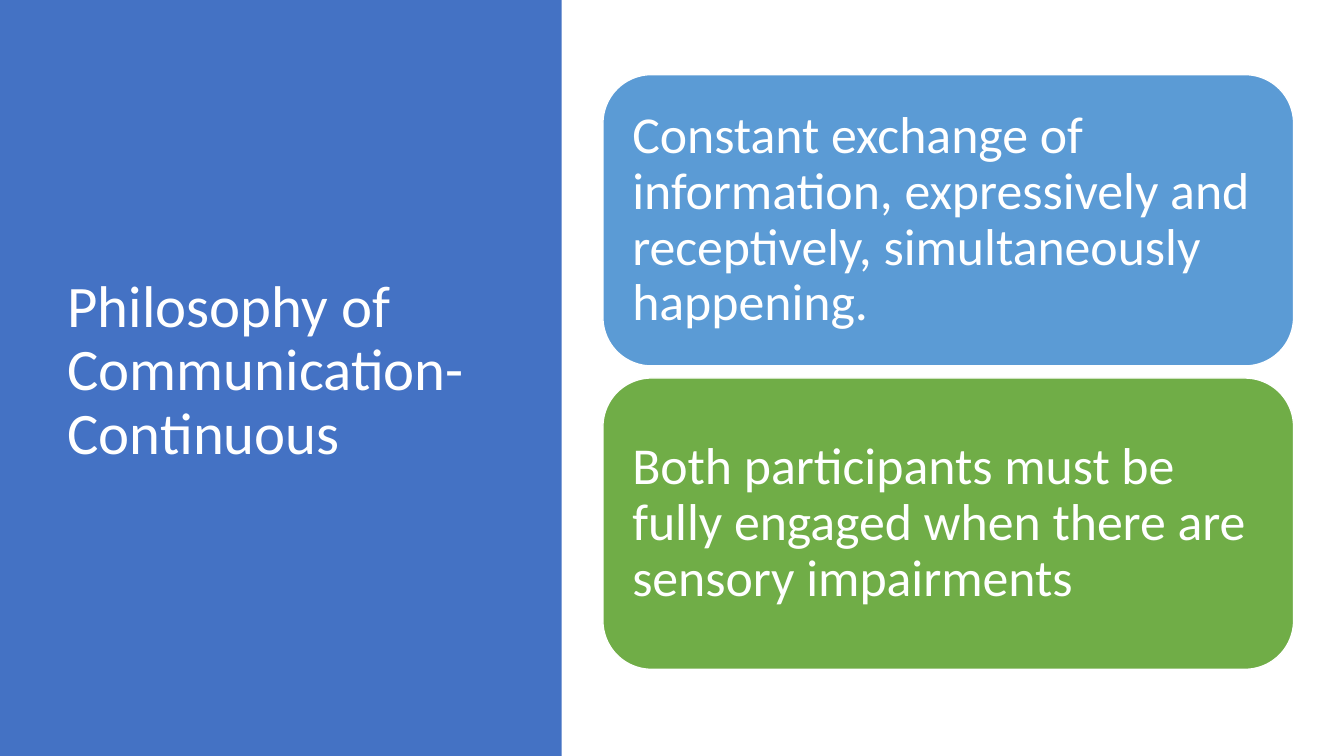
"""Build the slide on continuous communication."""
from pptx import Presentation
from pptx.dml.color import RGBColor
from pptx.enum import shapes, text
from pptx.util import Inches, Pt

TITLE = "Philosophy of Communication-Continuous"
CARDS = [
    ("Constant exchange of information, expressively and receptively, "
     "simultaneously happening.", "5B9BD5"),
    ("Both participants must be fully engaged when there are sensory "
     "impairments", "70AD47"),
]
THEME = {"panel": "4472C4", "white": "FFFFFF", "font": "Calibri",
         "title": 42, "body": 37, "after": 13, "line": 1}
SLIDE_W, SLIDE_H = 13.33, 7.5
PANEL_W = 5.57
TITLE_BOX = (0.57, 0.68, 4.16, 6.02)
CARD_X, CARD_Y, CARD_W, CARD_H, CARD_GAP = 5.98, 0.74, 6.85, 2.89, 0.12
CARD_INSET = 0.15


def rgb(name):
    return RGBColor.from_string(name)


def set_all(obj, values):
    for name, value in values.items():
        setattr(obj, name, value)


def add_block(s, kind, box, fill):
    sp = s.shapes.add_shape(kind, *map(Inches, box))
    sp.shadow.inherit = False
    sp.fill.solid()
    sp.fill.fore_color.rgb = rgb(fill)
    sp.line.fill.background()
    return sp


def write(sp, words, size, after=0):
    tf = sp.text_frame
    set_all(tf, {"word_wrap": True, "auto_size": text.MSO_AUTO_SIZE.NONE,
                 "vertical_anchor": text.MSO_ANCHOR.MIDDLE})
    p = tf.paragraphs[0]
    set_all(p, {"alignment": text.PP_ALIGN.LEFT, "line_spacing": 0.9,
                "space_after": Pt(after)})
    r = p.add_run()
    r.text = words
    set_all(r.font, {"name": THEME["font"], "size": Pt(size)})
    r.font.color.rgb = rgb(THEME["white"])


def main():
    prs = Presentation()
    set_all(prs, {"slide_width": Inches(SLIDE_W),
                  "slide_height": Inches(SLIDE_H)})
    s = prs.slides.add_slide(prs.slide_layouts[5])

    title = s.shapes.title
    set_all(title, dict(zip(("left", "top", "width", "height"),
                            map(Inches, TITLE_BOX))))
    write(title, TITLE, THEME["title"])
    panel = add_block(s, shapes.MSO_SHAPE.RECTANGLE,
                      (0, 0, PANEL_W, SLIDE_H), THEME["panel"])
    title.element.addprevious(panel.element)

    for i, (words, fill) in enumerate(CARDS):
        y = CARD_Y + i * (CARD_H + CARD_GAP)
        card = add_block(s, shapes.MSO_SHAPE.ROUNDED_RECTANGLE,
                         (CARD_X, y, CARD_W, CARD_H), fill)
        card.line.color.rgb = rgb(THEME["white"])
        card.line.width = Pt(THEME["line"])
        sides = ("left", "top", "right", "bottom")
        set_all(card.text_frame,
                {f"margin_{side}": Inches(CARD_INSET) for side in sides})
        write(card, words, THEME["body"], THEME["after"])

    prs.save("out.pptx")


if __name__ == "__main__":
    main()
